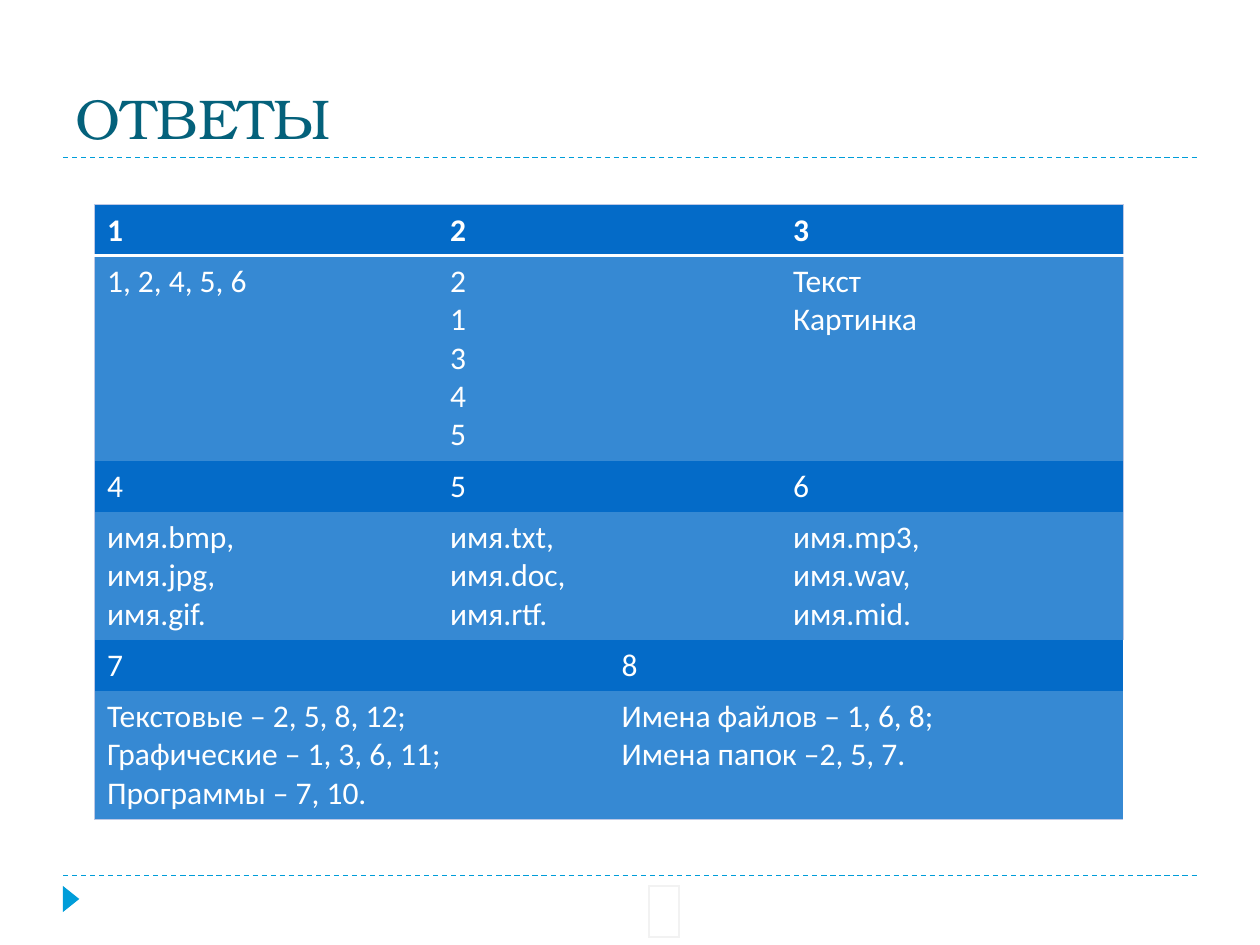
"""Builds the answers slide: a title, an answer table and the footer marks."""
from lxml.etree import SubElement
from pptx import Presentation
from pptx.dml.color import RGBColor as RGB
from pptx.enum.dml import MSO_LINE_DASH_STYLE as Dash
from pptx.enum.shapes import MSO_CONNECTOR as Connector, MSO_SHAPE as Shape
from pptx.enum.text import MSO_ANCHOR as Anchor, PP_ALIGN as Align
from pptx.oxml.ns import qn
from pptx.util import Pt

THEME = {
    "title": "04617B", "accent": "009DD9", "header": "046BC8", "answer": "3689D3",
    "text": "FFFFFF", "edge": "BDC8E5", "faint": "F2F2F2",
    "title_font": "TeX Gyre Bonum", "body_font": "Calibri",
    "title_size": 32, "body_size": 18,
}

TITLE = "ОТВЕТЫ"
THIRDS = [(0, 0), (1, 2), (3, 3)]
HALVES = [(0, 1), (2, 3)]
ANSWER_ROWS = [
    (THIRDS, [["1"], ["2"], ["3"]]),
    (THIRDS, [["1, 2, 4, 5, 6"], ["2", "1", "3", "4", "5"], ["Текст", "Картинка"]]),
    (THIRDS, [["4"], ["5"], ["6"]]),
    (THIRDS, [["имя.bmp,", "имя.jpg,", "имя.gif."],
              ["имя.txt,", "имя.doc,", "имя.rtf."],
              ["имя.mp3,", "имя.wav,", "имя.mid."]]),
    (HALVES, [["7"], ["8"]]),
    (HALVES, [["Текстовые – 2, 5, 8, 12;", "Графические – 1, 3, 6, 11;", "Программы – 7, 10."],
              ["Имена файлов – 1, 6, 8;", "Имена папок –2, 5, 7."]]),
]
COLUMN_WIDTHS = [196, 98, 98, 196]
LINE_HEIGHT, CELL_PADDING = 22, 7.2
RULE_HEIGHTS = [90, 500.4]


def add_run(paragraph, text, font, size, color, bold=False):
    run = paragraph.add_run()
    run.text = text
    run.font.name, run.font.size, run.font.bold = font, Pt(size), bold
    run.font.color.rgb = RGB.from_string(color)


def set_borders(cell, borders):
    properties = cell._tc.get_or_add_tcPr()
    for side in "LRTB":
        color, width = borders.get(side, (None, 0))
        line = SubElement(properties, qn(f"a:ln{side}"), w=str(int(Pt(width))))
        if color:
            SubElement(SubElement(line, qn("a:solidFill")), qn("a:srgbClr"), val=color)
        else:
            SubElement(line, qn("a:noFill"))


def add_plain_table(slide, left, top, widths, heights):
    table = slide.shapes.add_table(
        len(heights), len(widths), Pt(left), Pt(top), Pt(sum(widths)), Pt(sum(heights))).table
    table.first_row = table.horz_banding = False
    for column, width in zip(table.columns, widths):
        column.width = Pt(width)
    for row, height in zip(table.rows, heights):
        row.height = Pt(height)
    return table


def add_answers(slide):
    heights = [CELL_PADDING + LINE_HEIGHT * max(map(len, answers)) for _, answers in ANSWER_ROWS]
    table = add_plain_table(slide, 54, 117, COLUMN_WIDTHS, heights)
    edge, divider = (THEME["edge"], 0.75), (THEME["text"], 2)
    last_row, last_column = len(heights) - 1, len(COLUMN_WIDTHS) - 1
    for row, (spans, answers) in enumerate(ANSWER_ROWS):
        for column in range(len(COLUMN_WIDTHS)):
            cell = table.cell(row, column)
            borders = {}
            if column == 0:
                borders["L"] = edge
            if column == last_column:
                borders["R"] = edge
            if row < 2:
                borders["T"] = divider if row else edge
            if row in (0, last_row):
                borders["B"] = edge if row else divider
            set_borders(cell, borders)
            cell.fill.solid()
            cell.fill.fore_color.rgb = RGB.from_string(THEME["answer" if row % 2 else "header"])
        for (first, last), lines in zip(spans, answers):
            cell = table.cell(row, first)
            if last > first:
                cell.merge(table.cell(row, last))
            frame = cell.text_frame
            for index, line in enumerate(lines):
                paragraph = frame.add_paragraph() if index else frame.paragraphs[0]
                add_run(paragraph, line, THEME["body_font"], THEME["body_size"],
                        THEME["text"], bold=row == 0)


def add_footer_box(slide):
    cell = add_plain_table(slide, 370.8, 506.2, [16.6], [28.8]).cell(0, 0)
    set_borders(cell, dict.fromkeys("LRTB", (THEME["faint"], 1)))
    cell.fill.background()


def add_decor(slide):
    for height in RULE_HEIGHTS:
        rule = slide.shapes.add_connector(
            Connector.STRAIGHT, Pt(36), Pt(height), Pt(684), Pt(height))
        rule.line.color.rgb = RGB.from_string(THEME["accent"])
        rule.line.width = Pt(0.75)
        rule.line.dash_style = Dash.DASH
        SubElement(rule._element.spPr, qn("a:effectLst"))
    marker = slide.shapes.add_shape(
        Shape.ISOSCELES_TRIANGLE, Pt(33.1), Pt(509), Pt(15), Pt(9.4))
    marker.rotation = 90
    marker.shadow.inherit = False
    marker.fill.solid()
    marker.fill.fore_color.rgb = RGB.from_string(THEME["accent"])
    marker.line.fill.background()


def add_title(slide):
    title = slide.shapes.title
    title.left, title.top, title.width, title.height = Pt(36), Pt(12), Pt(648), Pt(78)
    title.text_frame.vertical_anchor = Anchor.BOTTOM
    heading = title.text_frame.paragraphs[0]
    heading.alignment = Align.LEFT
    add_run(heading, TITLE, THEME["title_font"], THEME["title_size"], THEME["title"])


def main():
    deck = Presentation()
    deck.slide_width, deck.slide_height = Pt(720), Pt(540)
    slide = deck.slides.add_slide(deck.slide_layouts[5])
    add_decor(slide)
    add_title(slide)
    add_answers(slide)
    add_footer_box(slide)
    deck.save("out.pptx")


if __name__ == "__main__":
    main()
